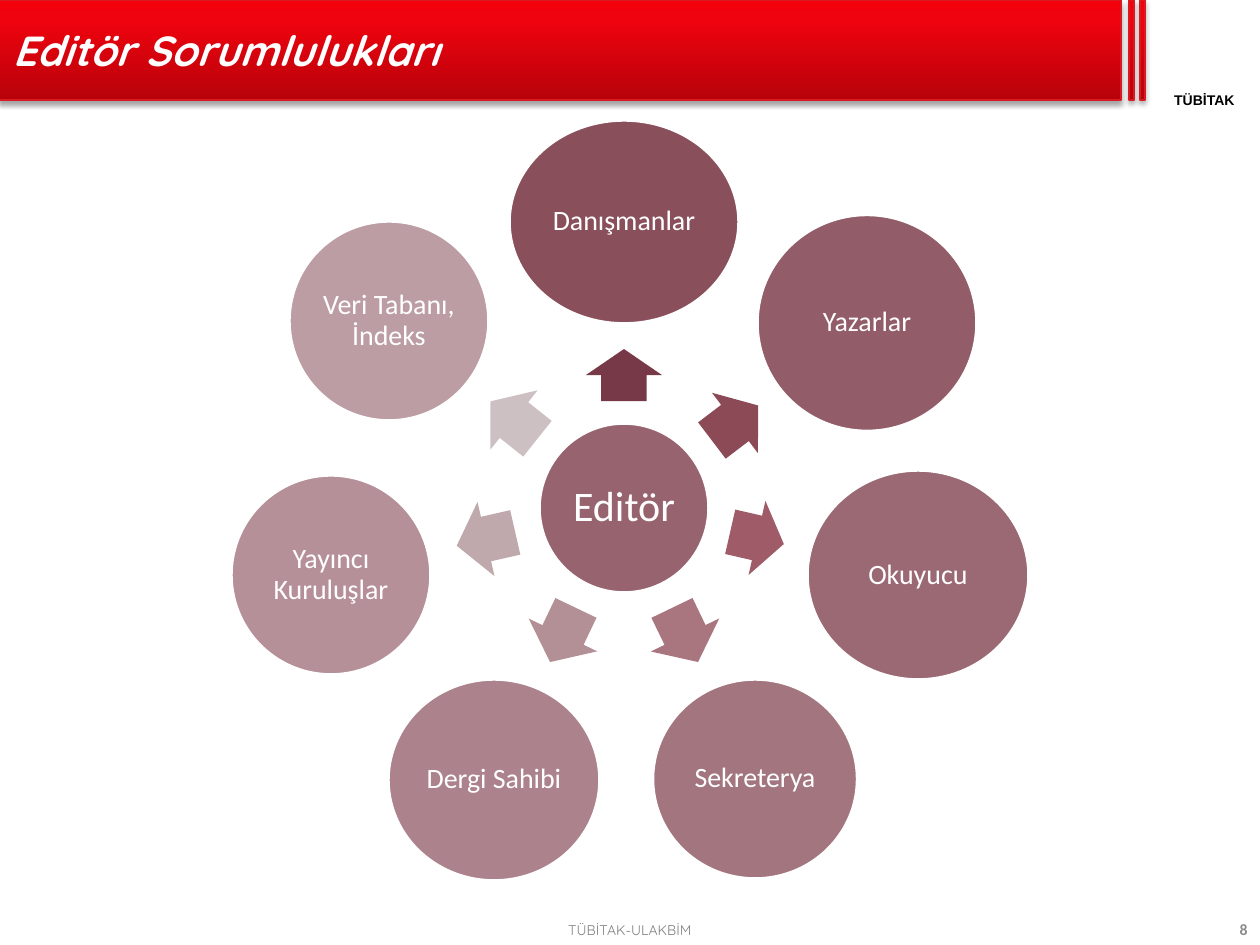
import math

import pptx
import pptx.dml.color
import pptx.enum.shapes
import pptx.enum.text
import pptx.oxml
import pptx.oxml.ns
import pptx.util

PX = 914400 / 126
SHAPE = pptx.enum.shapes.MSO_SHAPE
ALIGN = pptx.enum.text.PP_ALIGN
COLORS = {
    "white": "FFFFFF", "black": "000000", "footer": "808080", "number": "8C8C8C",
    "circle": "7D3C4A", "bar_low": "B8020B", "bar_mid": "EE030E",
    "bar_top": "F2000C", "bar_line": "DA1A23",
}
HUB = (624, 508, 170, 170)
# label, circle (centre x, centre y, width, height), arrow (centre x, centre y, length), arrow colour
ROLES = [
    ("Danışmanlar", (624, 222, 230, 204), (624, 375, 52), "773947"),
    ("Yazarlar", (867, 323, 220, 217), (735, 423, 58), "8C4A57"),
    ("Okuyucu", (918, 575, 222, 210), (757, 538, 55), "9F5B68"),
    ("Sekreterya", (755, 779, 205, 200), (685, 635, 60), "A9767F"),
    ("Dergi Sahibi", (494, 780, 212, 202), (563, 635, 60), "B39096"),
    ("Yayıncı Kuruluşlar", (331, 575, 200, 200), (486, 539, 60), "BFA9AC"),
    ("Veri Tabanı, İndeks", (389, 321, 200, 200), (514, 420, 60), "CCC0C2"),
]


def px(n):
    """Turn pixels into EMU."""
    return pptx.util.Emu(round(n * PX))


def rgb(value):
    """Turn a colour name or hex string into an RGB colour."""
    return pptx.dml.color.RGBColor.from_string(COLORS.get(value, value))


def put_text(s, text, font="Calibri", size=16, color="white", bold=False, italic=False,
             align=ALIGN.CENTER, inset=None, spacing=1.0):
    """Write one formatted, vertically centred paragraph into a shape."""
    tf = s.text_frame
    tf.word_wrap = True
    tf.auto_size = pptx.enum.text.MSO_AUTO_SIZE.NONE
    tf.vertical_anchor = pptx.enum.text.MSO_ANCHOR.MIDDLE
    if inset is not None:
        tf.margin_left = tf.margin_right = tf.margin_top = tf.margin_bottom = px(inset)
    p = tf.paragraphs[0]
    p.alignment, p.line_spacing = align, spacing
    r = p.add_run()
    r.text = text
    r.font.name, r.font.size = font, pptx.util.Pt(size)
    r.font.bold, r.font.italic = bold, italic
    r.font.color.rgb = rgb(color)


def add_label(sp, box, text, **style):
    """Add a text box."""
    put_text(sp.add_textbox(*map(px, box)), text, **style)


def add_centred(sp, kind, cx, cy, w, h, color):
    """Add a filled preset shape around a centre point."""
    s = sp.add_shape(kind, px(cx - w / 2), px(cy - h / 2), px(w), px(h))
    s.shadow.inherit = False
    s.fill.solid()
    s.fill.fore_color.rgb = rgb(color)
    return s


def add_circle(sp, box, text, opacity, size=16, inset=3):
    """Add a translucent labelled circle with a white outline."""
    s = add_centred(sp, SHAPE.OVAL, *box, "circle")
    clr = s._element.spPr.find(".//" + pptx.oxml.ns.qn("a:srgbClr"))
    alpha = clr.makeelement(pptx.oxml.ns.qn("a:alpha"), {"val": str(round(opacity * 1000))})
    clr.append(alpha)
    s.line.color.rgb = rgb("white")
    s.line.width = pptx.util.Pt(2)
    put_text(s, text, size=size, inset=inset, spacing=0.9)


def add_arrow(sp, cx, cy, length, target, color):
    """Add a block arrow turned from the hub towards its target."""
    s = add_centred(sp, SHAPE.RIGHT_ARROW, cx, cy, length, 76, color)
    s.line.fill.background()
    s.adjustments[0], s.adjustments[1] = 0.6, 0.5
    s.rotation = math.degrees(math.atan2(target[1] - HUB[1], target[0] - HUB[0])) % 360


def add_bar(sp, left, width):
    """Add a red gradient header bar with a soft shadow."""
    s = sp.add_shape(SHAPE.RECTANGLE, px(left), 0, px(width), px(100))
    s.shadow.inherit = False
    s.line.color.rgb = rgb("bar_line")
    s.line.width = pptx.util.Pt(0.75)
    ns = pptx.oxml.ns.nsdecls("a")
    stops = "".join(
        f'<a:gs pos="{pos}"><a:srgbClr val="{COLORS[name]}"/></a:gs>'
        for pos, name in ((0, "bar_low"), (80000, "bar_mid"), (100000, "bar_top")))
    gradient = pptx.oxml.parse_xml(
        f'<a:gradFill {ns} rotWithShape="1"><a:gsLst>{stops}</a:gsLst>'
        '<a:lin ang="16200000" scaled="0"/></a:gradFill>')
    shadow = pptx.oxml.parse_xml(
        f'<a:outerShdw {ns} blurRad="39370" dist="22860" dir="5400000" rotWithShape="0">'
        f'<a:srgbClr val="{COLORS["black"]}"><a:alpha val="35000"/></a:srgbClr></a:outerShdw>')
    spPr = s._element.spPr
    spPr.find(pptx.oxml.ns.qn("a:prstGeom")).addnext(gradient)
    spPr.find(pptx.oxml.ns.qn("a:effectLst")).append(shadow)


def add_title(slide, text):
    """Place the title placeholder on top of the header bar."""
    s = slide.shapes.title
    s.left, s.top, s.width, s.height = map(px, (0, 1, 753, 97))
    put_text(s, text, font="Quicksand", size=24, bold=True, italic=True, align=ALIGN.LEFT)
    slide.shapes._spTree.append(s._element)


def main():
    """Build the slide and save it."""
    prs = pptx.Presentation()
    prs.slide_width, prs.slide_height = px(1260), px(945)
    slide = prs.slides.add_slide(prs.slide_layouts[5])
    sp = slide.shapes
    for left, width in ((-2, 1123), (1129, 5), (1140, 5)):
        add_bar(sp, left, width)
    add_label(sp, (1140, 91, 129, 17), "TÜBİTAK", font="Arial", size=8, color="black",
              bold=True, inset=0)
    add_label(sp, (0, 914, 1260, 31), "TÜBİTAK-ULAKBİM", font="Quicksand", size=8,
              color="footer")
    add_label(sp, (968, 914, 292, 31), "8", size=9, color="number", bold=True,
              align=ALIGN.RIGHT)
    add_title(slide, "Editör Sorumlulukları")
    add_circle(sp, HUB, "Editör", 80, size=24, inset=4)
    for i, (label, circle, arrow, color) in enumerate(ROLES):
        add_arrow(sp, *arrow, circle, color)
        add_circle(sp, circle, label, 90 - 40 * i / (len(ROLES) - 1))
    prs.save("out.pptx")


if __name__ == "__main__":
    main()
